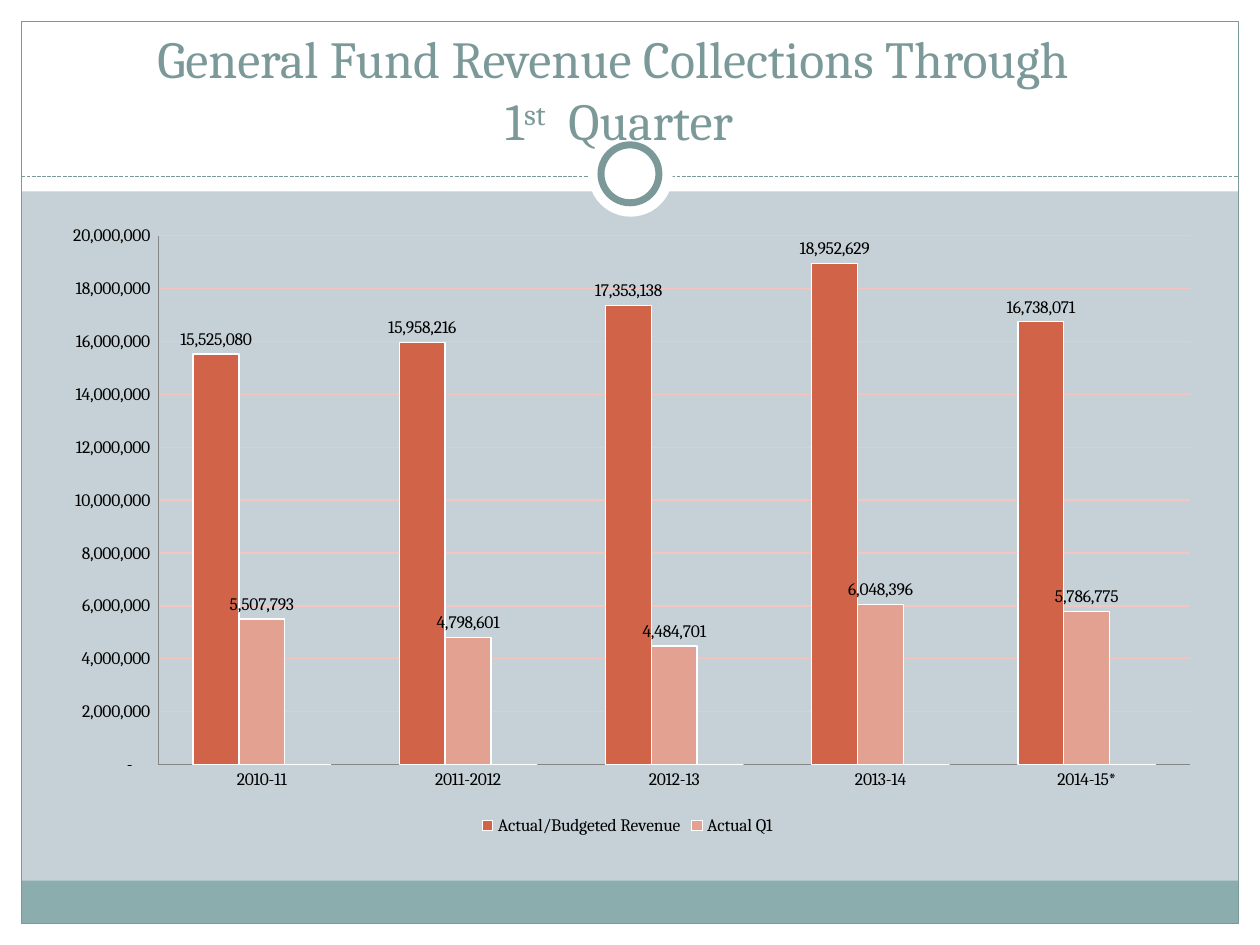
"""Build the slide of general fund revenue by year."""
from dataclasses import dataclass
from typing import Optional

from lxml.etree import SubElement as Sub
from pptx import Presentation
from pptx.chart.data import CategoryChartData as Data
from pptx.dml.color import RGBColor as Color
from pptx.enum.chart import XL_CHART_TYPE as Kind, XL_LABEL_POSITION as Spot
from pptx.enum.chart import XL_LEGEND_POSITION as Side, XL_TICK_MARK as Tick
from pptx.enum.dml import MSO_LINE as Dash
from pptx.enum.shapes import MSO_CONNECTOR as Link, MSO_SHAPE as Form
from pptx.enum.text import MSO_ANCHOR as Hold, MSO_AUTO_SIZE as Fit, PP_ALIGN as Align
from pptx.oxml.ns import qn
from pptx.util import Inches, Pt

CELL = Inches(0.1)
COLS, ROWS = 100, 75


@dataclass(frozen=True)
class Theme:
    font: str = "Cambria"
    back: str = "C5D1D7"
    white: str = "FFFFFF"
    slate: str = "7C999A"
    teal: str = "8CADAE"
    rust: str = "D16349"
    rose: str = "E3A192"
    grid: str = "F6C5BF"
    axis: str = "868686"
    ink: str = "000000"
    head: float = 29.7
    body: float = 10
    thin: float = 0.75
    ring: float = 4


@dataclass(frozen=True)
class Box:
    col: float
    row: float
    wide: float
    high: float

    def span(self) -> tuple[int, ...]:
        return tuple(round(n * CELL) for n in (self.col, self.row, self.wide, self.high))


@dataclass(frozen=True)
class Part:
    box: Box
    fill: Optional[str] = None
    line: Optional[str] = None
    width: float = 0.75
    form: Form = Form.RECTANGLE


@dataclass(frozen=True)
class Group:
    name: str
    vals: tuple[int, ...]
    fill: str
    code: Optional[str] = None


LOOK = Theme()
EDGE = 1.7
MONEY = '_(* #,##0_);_(* \\(#,##0\\);_(* "-"??_);_(@_)'
YEARS = ("2010-11", "2011-2012", "2012-13", "2013-14", "2014-15*")
GROUPS = (
    Group("Actual/Budgeted Revenue", (15525080, 15958216, 17353138, 18952629, 16738071),
          LOOK.rust, "#,##0"),
    Group("Actual Q1", (5507793, 4798601, 4484701, 6048396, 5786775), LOOK.rose, MONEY),
    Group("Series 3", (0,) * len(YEARS), LOOK.teal),
)
INNER = COLS - 2 * EDGE
FRAME = (
    Part(Box(0, ROWS - EDGE, COLS, EDGE), LOOK.white),
    Part(Box(0, 0, COLS, 15.2), LOOK.white),
    Part(Box(0, 0, EDGE, ROWS), LOOK.white),
    Part(Box(COLS - EDGE, 0, EDGE, ROWS), LOOK.white),
    Part(Box(EDGE, 69.9, INNER, 3.4), LOOK.teal),
    Part(Box(EDGE, EDGE, INNER, ROWS - 2 * EDGE), line=LOOK.slate),
)
RINGS = (
    Part(Box(46.7, 10.5, 6.7, 6.7), LOOK.white, form=Form.OVAL),
    Part(Box(47.7, 11.5, 4.6, 4.6), LOOK.white, LOOK.slate, LOOK.ring, Form.OVAL),
)
HEAD = (("General Fund Revenue Collections Through ", 0), (None, 0),
        ("1", 0), ("st", 30000), ("  Quarter", 0))


def tint(code: str) -> Color:
    return Color.from_string(code)


def paint(fill, code: str) -> None:
    fill.solid()
    fill.fore_color.rgb = tint(code)


def stroke(line, code: str, width: float = LOOK.thin) -> None:
    paint(line.fill, code)
    line.width = Pt(width)


def style(font, size: float, code: str) -> None:
    font.name, font.size, font.bold = LOOK.font, Pt(size), False
    font.color.rgb = tint(code)


def draw(slide, part: Part) -> None:
    shape = slide.shapes.add_shape(part.form, *part.box.span())
    shape.shadow.inherit = False
    if part.fill:
        paint(shape.fill, part.fill)
    else:
        shape.fill.background()
    if part.line:
        stroke(shape.line, part.line, part.width)
    else:
        shape.line.fill.background()


def rule(slide, row: float) -> None:
    left, top, wide, _ = Box(EDGE, row, INNER, 0).span()
    line = slide.shapes.add_connector(Link.STRAIGHT, left, top, left + wide, top)
    stroke(line.line, LOOK.slate)
    line.line.dash_style = Dash.SQUARE_DOT
    Sub(line.element.spPr, qn("a:effectLst"))


def write(title, box: Box) -> None:
    title.left, title.top, title.width, title.height = box.span()
    frame = title.text_frame
    frame.word_wrap, frame.auto_size = True, Fit.NONE
    frame.vertical_anchor = Hold.BOTTOM
    para = frame.paragraphs[0]
    para.alignment = Align.CENTER
    for text, lift in HEAD:
        if text is None:
            para.add_line_break()
            continue
        run = para.add_run()
        run.text = text
        style(run.font, LOOK.head, LOOK.slate)
        if lift:
            run._r.get_or_add_rPr().set("baseline", str(lift))
    title.element.getparent().append(title.element)


def place(chart, **area: float) -> None:
    plot = chart.element.find(".//" + qn("c:plotArea"))
    for old in plot.findall(qn("c:layout")):
        plot.remove(old)
    lay = Sub(plot, qn("c:layout"))
    plot.insert(0, lay)
    spot = Sub(lay, qn("c:manualLayout"))
    marks = {"layoutTarget": "inner", "xMode": "edge", "yMode": "edge", **area}
    for tag, val in marks.items():
        Sub(spot, qn(f"c:{tag}")).set("val", str(val))


def hide(legend, index: int) -> None:
    entry = Sub(legend._element, qn("c:legendEntry"))
    legend._element.insert(1, entry)
    Sub(entry, qn("c:idx")).set("val", str(index))
    Sub(entry, qn("c:delete")).set("val", "1")


def graph(slide, box: Box) -> None:
    data = Data()
    data.categories = YEARS
    for group in GROUPS:
        data.add_series(group.name, group.vals)
    chart = slide.shapes.add_chart(Kind.COLUMN_CLUSTERED, *box.span(), data).chart
    style(chart.font, LOOK.body, LOOK.ink)
    chart.has_title = False
    chart.has_legend = True
    chart.legend.position, chart.legend.include_in_layout = Side.BOTTOM, False
    hide(chart.legend, len(GROUPS) - 1)
    plot = chart.plots[0]
    plot.gap_width, plot.overlap, plot.vary_by_categories = 150, 0, False
    for bar, group in zip(plot.series, GROUPS):
        paint(bar.format.fill, group.fill)
        stroke(bar.format.line, LOOK.white)
        if group.code:
            tags = bar.data_labels
            tags.show_value, tags.position = True, Spot.OUTSIDE_END
            tags.number_format, tags.number_format_is_linked = group.code, False
    for axis in (chart.category_axis, chart.value_axis):
        axis.major_tick_mark = axis.minor_tick_mark = Tick.NONE
        stroke(axis.format.line, LOOK.axis)
    scale = chart.value_axis
    scale.minimum_scale, scale.maximum_scale, scale.major_unit = 0, 20_000_000, 2_000_000
    scale.tick_labels.number_format = MONEY
    scale.tick_labels.number_format_is_linked = False
    stroke(scale.major_gridlines.format.line, LOOK.grid)
    place(chart, x=0.1, y=0.04, w=0.88, h=0.84)


def main() -> None:
    deck = Presentation()
    deck.slide_width, deck.slide_height = COLS * CELL, ROWS * CELL
    slide = deck.slides.add_slide(deck.slide_layouts[5])
    paint(slide.background.fill, LOOK.back)
    for part in FRAME:
        draw(slide, part)
    rule(slide, 14)
    for part in RINGS:
        draw(slide, part)
    write(slide.shapes.title, Box(2.5, 4.2, 93.3, 8.3))
    graph(slide, Box(3.3, 16.7, 93, 50))
    deck.save("out.pptx")


if __name__ == "__main__":
    main()
